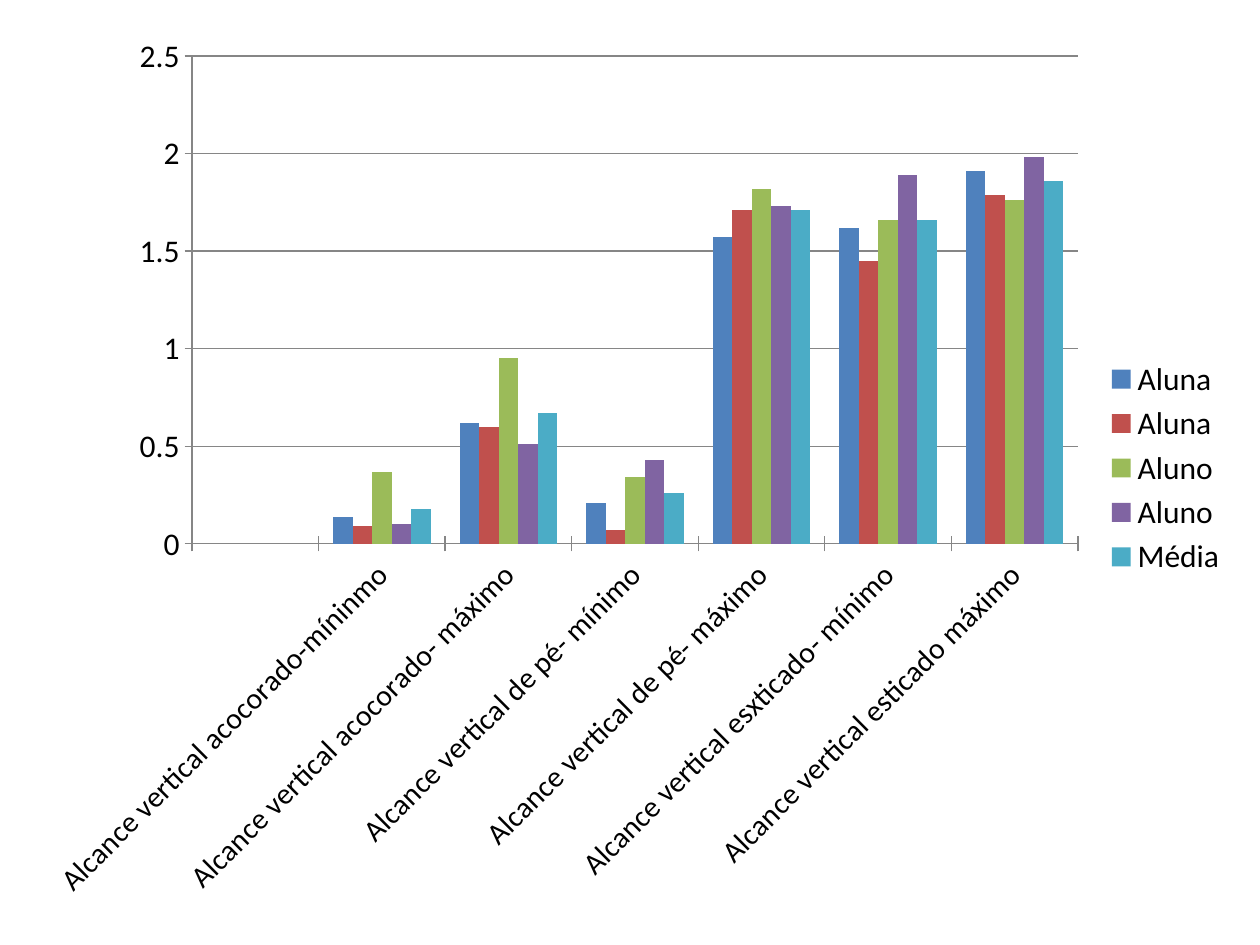
from lxml import etree
from pptx import Presentation
from pptx.chart.data import CategoryChartData
from pptx.dml.color import RGBColor
from pptx.enum.chart import XL_CHART_TYPE as ChartType
from pptx.enum.chart import XL_LEGEND_POSITION as LegendPosition
from pptx.enum.chart import XL_TICK_MARK as TickMark
from pptx.oxml import parse_xml
from pptx.oxml.ns import nsdecls, qn
from pptx.util import Pt

PX = 914400 // 126
SLIDE = (1260, 945)
FRAME = (29, 20, 1211, 896)
PLOT = (192, 56, 886, 488)
FONT = "Calibri"
COLORS = {
    "text": "000000",
    "line": "868686",
    "blue": "4F81BD",
    "red": "C0504D",
    "green": "9BBB59",
    "purple": "8064A2",
    "aqua": "4BACC6",
}
CATEGORIES = [
    "",
    "Alcance vertical acocorado-míninmo",
    "Alcance vertical acocorado- máximo",
    "Alcance vertical de pé- mínimo",
    "Alcance vertical de pé- máximo",
    "Alcance vertical esxticado- mínimo",
    "Alcance vertical esticado máximo",
]
SERIES = [
    ("Aluna", "blue", [None, 0.14, 0.62, 0.21, 1.57, 1.62, 1.91]),
    ("Aluna", "red", [None, 0.09, 0.6, 0.07, 1.71, 1.45, 1.79]),
    ("Aluno", "green", [None, 0.37, 0.95, 0.34, 1.82, 1.66, 1.76]),
    ("Aluno", "purple", [None, 0.1, 0.51, 0.43, 1.73, 1.89, 1.98]),
    ("Média", "aqua", [None, 0.18, 0.67, 0.26, 1.71, 1.66, 1.86]),
]


def color(name):
    return RGBColor.from_string(COLORS[name])


def style_font(font, size):
    font.name = FONT
    font.size = Pt(size)
    font.bold = False
    font.color.rgb = color("text")


def style_line(line):
    line.color.rgb = color("line")
    line.width = Pt(0.75)


def place_plot(chart):
    left, top, width, height = FRAME
    x, y, w, h = PLOT
    shares = {"x": (x - left) / width, "y": (y - top) / height,
              "w": w / width, "h": h / height}
    layout = parse_xml(f"<c:layout {nsdecls('c')}><c:manualLayout/></c:layout>")
    manual = layout[0]
    settings = [("layoutTarget", "inner"), ("xMode", "edge"), ("yMode", "edge")]
    settings += [(key, f"{share:.4f}") for key, share in shares.items()]
    for tag, value in settings:
        etree.SubElement(manual, qn(f"c:{tag}")).set("val", value)
    plot_area = chart.element.find(".//" + qn("c:plotArea"))
    for old in plot_area.findall(qn("c:layout")):
        plot_area.remove(old)
    plot_area.insert(0, layout)


def add_reach_chart(slide):
    data = CategoryChartData()
    data.categories = CATEGORIES
    for name, _, values in SERIES:
        data.add_series(name, values)
    chart = slide.shapes.add_chart(
        ChartType.COLUMN_CLUSTERED, *(n * PX for n in FRAME), data).chart
    chart.has_title = False
    style_font(chart.font, 10)

    plot = chart.plots[0]
    plot.gap_width = 150
    plot.overlap = 0
    plot.vary_by_categories = False
    for series, (_, fill, _) in zip(plot.series, SERIES):
        series.format.fill.solid()
        series.format.fill.fore_color.rgb = color(fill)

    for axis, size in ((chart.category_axis, 17), (chart.value_axis, 18)):
        axis.major_tick_mark = TickMark.CROSS
        axis.minor_tick_mark = TickMark.NONE
        style_font(axis.tick_labels.font, size)
        style_line(axis.format.line)
    labels = chart.category_axis._element.find(qn("c:txPr"))
    labels.find(qn("a:bodyPr")).set("rot", "-2700000")
    scale = chart.value_axis
    scale.minimum_scale, scale.maximum_scale, scale.major_unit = 0, 2.5, 0.5
    scale.tick_labels.number_format = "General"
    scale.tick_labels.number_format_is_linked = False
    style_line(scale.major_gridlines.format.line)

    chart.has_legend = True
    chart.legend.position = LegendPosition.RIGHT
    chart.legend.include_in_layout = False
    style_font(chart.legend.font, 18)
    place_plot(chart)


def main():
    presentation = Presentation()
    presentation.slide_width, presentation.slide_height = (n * PX for n in SLIDE)
    slide = presentation.slides.add_slide(presentation.slide_layouts[6])
    add_reach_chart(slide)
    presentation.save("out.pptx")


if __name__ == "__main__":
    main()
